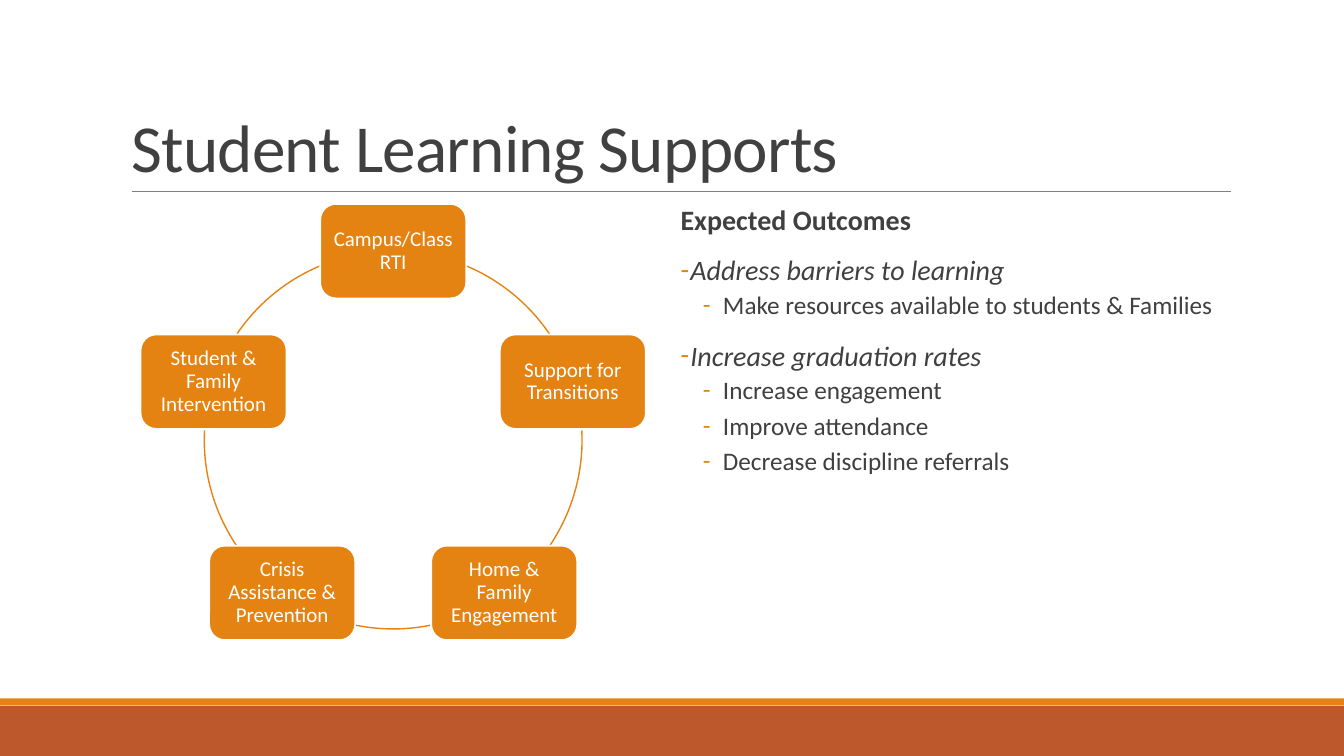
from math import cos, radians, sin

from lxml import etree
from pptx import Presentation
from pptx.dml.color import RGBColor
from pptx.enum.shapes import MSO_CONNECTOR, MSO_SHAPE
from pptx.enum.text import MSO_ANCHOR, MSO_AUTO_SIZE, PP_ALIGN
from pptx.oxml.ns import qn
from pptx.util import Cm, Pt

TITLE = "Student Learning Supports"
NODES = [
    "Campus/Class RTI",
    "Support for Transitions",
    "Home & Family Engagement",
    "Crisis Assistance & Prevention",
    "Student & Family Intervention",
]
ARCS = [(292.9, 325.8), (357.1, 33.8), (78.7, 101.3), (146.2, 182.9), (214.2, 247.1)]
HEAD, ITEM, SUB = "head", "item", "sub"
POINTS = [
    (HEAD, "Expected Outcomes"),
    (ITEM, "Address barriers to learning"),
    (SUB, "Make resources available to students & Families"),
    (ITEM, "Increase graduation rates"),
    (SUB, "Increase engagement"),
    (SUB, "Improve attendance"),
    (SUB, "Decrease discipline referrals"),
]
STYLES = {
    HEAD: dict(level=0, size=20, before=12, after=2, left=0, hang=0),
    ITEM: dict(level=0, size=20, before=12, after=2, left=0.25, hang=0.25),
    SUB: dict(level=1, size=18, before=2, after=4, left=1.07, hang=0.51),
}

FONT = "Calibri"
ORANGE = RGBColor(0xE4, 0x83, 0x12)
RUST = RGBColor(0xBD, 0x58, 0x2C)
INK = RGBColor(0x40, 0x40, 0x40)
GREY = RGBColor(0x80, 0x80, 0x80)
WHITE = RGBColor(0xFF, 0xFF, 0xFF)

RECT, ROUND, ARC = MSO_SHAPE.RECTANGLE, MSO_SHAPE.ROUNDED_RECTANGLE, MSO_SHAPE.ARC
STRAIGHT = MSO_CONNECTOR.STRAIGHT
LEFT, CENTER = PP_ALIGN.LEFT, PP_ALIGN.CENTER
TOP, MIDDLE, BOTTOM = MSO_ANCHOR.TOP, MSO_ANCHOR.MIDDLE, MSO_ANCHOR.BOTTOM
FIXED = MSO_AUTO_SIZE.NONE

WIDE, HIGH = 33.87, 19.05
MID_X, MID_Y, RADIUS = 9.91, 11.09, 4.76
NODE_W, NODE_H = 3.68, 2.38


def style(font, size, color):
    font.name, font.size = FONT, Pt(size)
    font.color.rgb = color


def place(shape, x, y, w, h):
    shape.left, shape.top, shape.width, shape.height = Cm(x), Cm(y), Cm(w), Cm(h)


def add_box(shapes, kind, x, y, w, h, fill=None):
    box = shapes.add_shape(kind, Cm(x), Cm(y), Cm(w), Cm(h))
    box.shadow.inherit = False
    if fill is None:
        box.fill.background()
    else:
        box.fill.solid()
        box.fill.fore_color.rgb = fill
        box.line.fill.background()
    return box


def add_frame(shapes):
    add_box(shapes, RECT, 0, 17.78, WIDE, 1.27, RUST)
    add_box(shapes, RECT, 0, 17.6, WIDE, 0.17, ORANGE)
    rule = shapes.add_connector(STRAIGHT, Cm(3.32), Cm(4.82), Cm(31.01), Cm(4.82))
    rule.line.color.rgb = GREY
    rule.line.width = Pt(0.5)
    etree.SubElement(rule.element.spPr, qn("a:effectLst"))


def add_title(title):
    place(title, 3.05, 0.79, 27.94, 4.04)
    frame = title.text_frame
    frame.text = TITLE
    frame.auto_size, frame.vertical_anchor = FIXED, BOTTOM
    para = frame.paragraphs[0]
    para.alignment, para.line_spacing = LEFT, 0.85
    run = para.runs[0]
    style(run.font, 48, INK)
    run.font._element.set("spc", "-50")


def add_ring(shapes):
    for start, end in ARCS:
        arc = add_box(shapes, ARC, MID_X - RADIUS, MID_Y - RADIUS, 2 * RADIUS, 2 * RADIUS)
        arc.adjustments[0] = start * 0.6
        arc.adjustments[1] = end * 0.6
        arc.line.color.rgb = ORANGE
        arc.line.width = Pt(1)
    for i, text in enumerate(NODES):
        turn = radians(i * 360 / len(NODES) - 90)
        x = MID_X + RADIUS * cos(turn) - NODE_W / 2
        y = MID_Y + RADIUS * sin(turn) - NODE_H / 2
        node = add_box(shapes, ROUND, x, y, NODE_W, NODE_H, ORANGE)
        node.line.color.rgb = WHITE
        node.line.width = Pt(1.25)
        frame = node.text_frame
        frame.text = text
        frame.word_wrap, frame.vertical_anchor = True, MIDDLE
        frame.margin_left = frame.margin_right = Cm(0.15)
        frame.margin_top = frame.margin_bottom = Cm(0.15)
        para = frame.paragraphs[0]
        para.alignment, para.line_spacing = CENTER, 0.9
        style(para.runs[0].font, 15, WHITE)


def set_bullet(para, kind, left, hang):
    props = para._p.get_or_add_pPr()
    props.set("marL", str(Cm(left)))
    props.set("indent", str(-Cm(hang)))
    if kind == HEAD:
        etree.SubElement(props, qn("a:buNone"))
        return
    tint = etree.SubElement(props, qn("a:buClr"))
    etree.SubElement(tint, qn("a:srgbClr"), val=str(ORANGE))
    etree.SubElement(props, qn("a:buFont"), typeface=FONT)
    etree.SubElement(props, qn("a:buChar"), char="-")


def add_points(body):
    place(body, 17.15, 5.08, 14.4, 12.98)
    frame = body.text_frame
    frame.text = "\n".join(text for kind, text in POINTS)
    frame.auto_size, frame.vertical_anchor = FIXED, TOP
    frame.margin_left = frame.margin_right = 0
    for para, (kind, text) in zip(frame.paragraphs, POINTS):
        look = STYLES[kind]
        para.level, para.line_spacing = look["level"], 0.9
        para.space_before, para.space_after = Pt(look["before"]), Pt(look["after"])
        set_bullet(para, kind, look["left"], look["hang"])
        font = para.runs[0].font
        style(font, look["size"], INK)
        font.bold, font.italic = kind == HEAD, kind == ITEM


def main():
    deck = Presentation()
    deck.slide_width, deck.slide_height = Cm(WIDE), Cm(HIGH)
    slide = deck.slides.add_slide(deck.slide_layouts[1])
    add_frame(slide.shapes)
    add_title(slide.shapes.title)
    add_ring(slide.shapes)
    add_points(slide.placeholders[1])
    deck.save("out.pptx")


if __name__ == "__main__":
    main()
